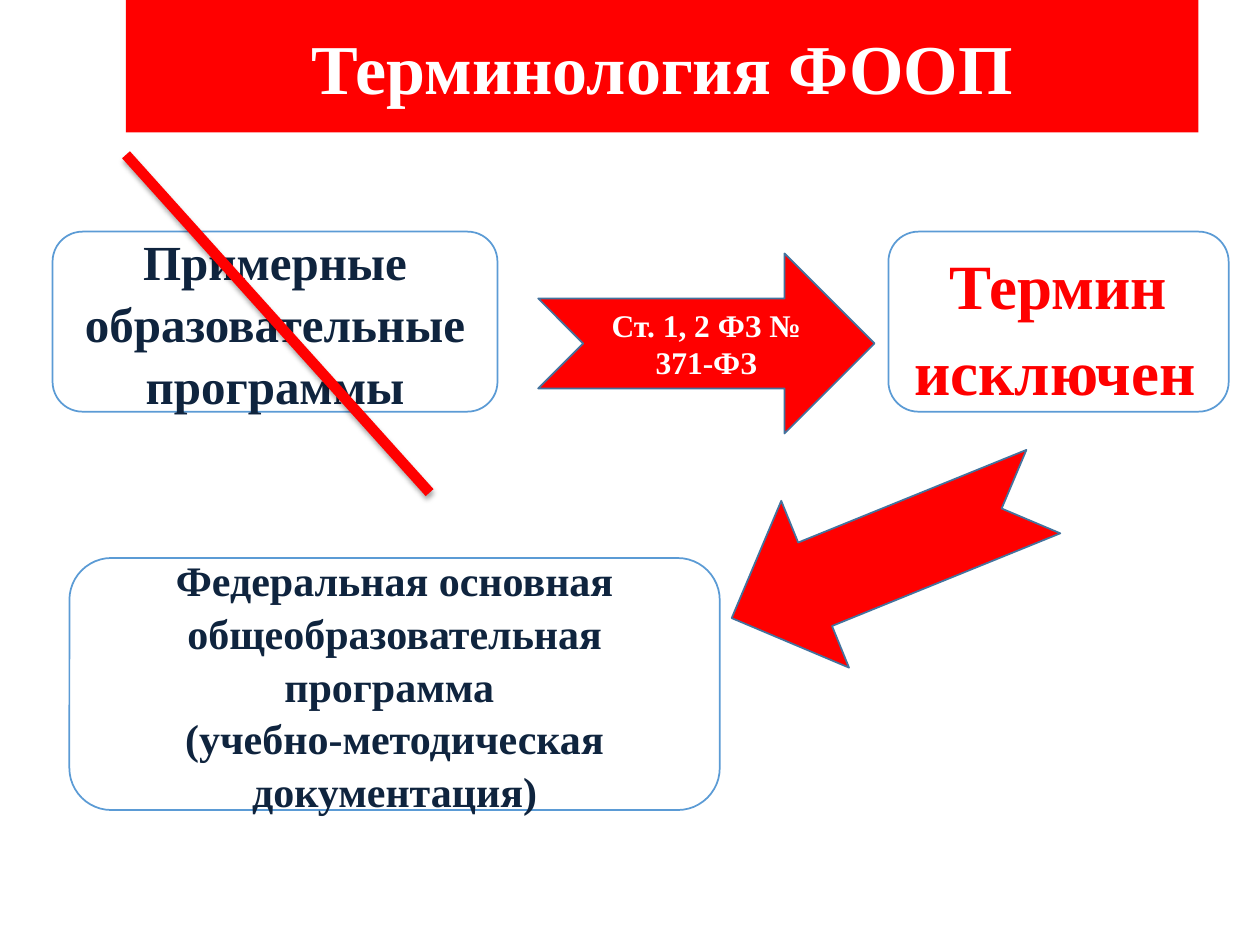
from dataclasses import dataclass

from lxml import etree
from pptx import Presentation
from pptx.dml.color import RGBColor
from pptx.enum import shapes, text
from pptx.oxml import ns
from pptx.util import Cm, Pt

FONT = "Times New Roman"
RED, WHITE, NAVY, BLACK = "FF0000", "FFFFFF", "0F243E", "000000"
BOX_EDGE, ARROW_EDGE = "5B9BD5", "43739E"
KIND = shapes.MSO_SHAPE


@dataclass
class Span:
    words: str
    size: float
    color: str
    font: str | None = FONT
    bold: bool = True


@dataclass
class Block:
    kind: KIND
    left: float
    top: float
    width: float
    height: float
    fill: str
    edge: str | None = None
    paras: tuple[tuple[Span, ...], ...] = ()
    spacing: float = 1.0
    rotation: float = 0


def hex_color(value: str) -> RGBColor:
    return RGBColor.from_string(value)


def add_span(para, span: Span) -> None:
    run = para.add_run()
    run.text = span.words
    run.font.size = Pt(span.size)
    run.font.bold = span.bold
    run.font.color.rgb = hex_color(span.color)
    if span.font:
        run.font.name = span.font


def add_block(page, block: Block) -> None:
    box = page.shapes.add_shape(block.kind, Cm(block.left), Cm(block.top),
                                Cm(block.width), Cm(block.height))
    box.shadow.inherit = False
    box.rotation = block.rotation
    box.fill.solid()
    box.fill.fore_color.rgb = hex_color(block.fill)
    if block.edge:
        box.line.color.rgb = hex_color(block.edge)
        box.line.width = Pt(1)
    else:
        box.line.fill.background()

    frame = box.text_frame
    frame.word_wrap = True
    frame.vertical_anchor = text.MSO_ANCHOR.MIDDLE
    for index, spans in enumerate(block.paras):
        para = frame.add_paragraph() if index else frame.paragraphs[0]
        para.alignment = text.PP_ALIGN.CENTER
        para.line_spacing = block.spacing
        for span in spans:
            add_span(para, span)


def add_strike(page, start: tuple[float, float], end: tuple[float, float]) -> None:
    """Draw the thick red line, with a soft shadow, that crosses out a term."""
    strike = page.shapes.add_connector(shapes.MSO_CONNECTOR.STRAIGHT,
                                       *map(Cm, start + end))
    strike.line.color.rgb = hex_color(RED)
    strike.line.width = Pt(6)
    effects = etree.SubElement(strike._element.spPr, ns.qn("a:effectLst"))
    shadow = etree.SubElement(effects, ns.qn("a:outerShdw"), blurRad=str(Pt(3.1)),
                              dist=str(Pt(1.8)), dir="5400000", rotWithShape="0")
    color = etree.SubElement(shadow, ns.qn("a:srgbClr"), val=BLACK)
    etree.SubElement(color, ns.qn("a:alpha"), val="35000")


ROW_TOP, ROW_HEIGHT = 4.67, 3.63
ARROW_WIDTH = 6.78

TITLE = Block(KIND.RECTANGLE, 2.54, 0, 21.62, 2.67, RED,
              paras=((Span("Терминология ФООП", 40, WHITE),),))
OLD_TERM = Block(KIND.ROUNDED_RECTANGLE, 1.06, ROW_TOP, 8.97, ROW_HEIGHT, WHITE, BOX_EDGE,
                 ((Span("Примерные образовательные программы", 28, NAVY),),), 1.05)
ARROW_DOWN = Block(KIND.NOTCHED_RIGHT_ARROW, 14.5, 9.37, ARROW_WIDTH, ROW_HEIGHT,
                   RED, ARROW_EDGE, rotation=157.9)
EXCLUDED = Block(KIND.ROUNDED_RECTANGLE, 17.91, ROW_TOP, 6.86, ROW_HEIGHT, WHITE, BOX_EDGE,
                 ((Span("Термин исключен", 36, RED),
                   Span(" ", 18, BLACK, font=None, bold=False)),), 1.15)
LAW_ARROW = Block(KIND.NOTCHED_RIGHT_ARROW, 10.85, 5.11, ARROW_WIDTH, ROW_HEIGHT,
                  RED, ARROW_EDGE, ((Span("Ст. 1, 2 ФЗ № 371-ФЗ", 18, WHITE),),))
NEW_TERM = Block(KIND.ROUNDED_RECTANGLE, 1.4, 11.25, 13.11, 5.08, WHITE, BOX_EDGE,
                 ((Span("Федеральная основная общеобразовательная программа ", 24, NAVY),),
                  (Span("(учебно-методическая документация)", 24, NAVY),)), 1.05)


def main() -> None:
    deck = Presentation()
    deck.slide_width, deck.slide_height = Cm(25.4), Cm(19.05)
    page = deck.slides.add_slide(deck.slide_layouts[6])
    for block in (TITLE, OLD_TERM, ARROW_DOWN, EXCLUDED):
        add_block(page, block)
    add_strike(page, (2.54, 3.12), (8.66, 9.93))
    for block in (LAW_ARROW, NEW_TERM):
        add_block(page, block)
    deck.save("out.pptx")


if __name__ == "__main__":
    main()
